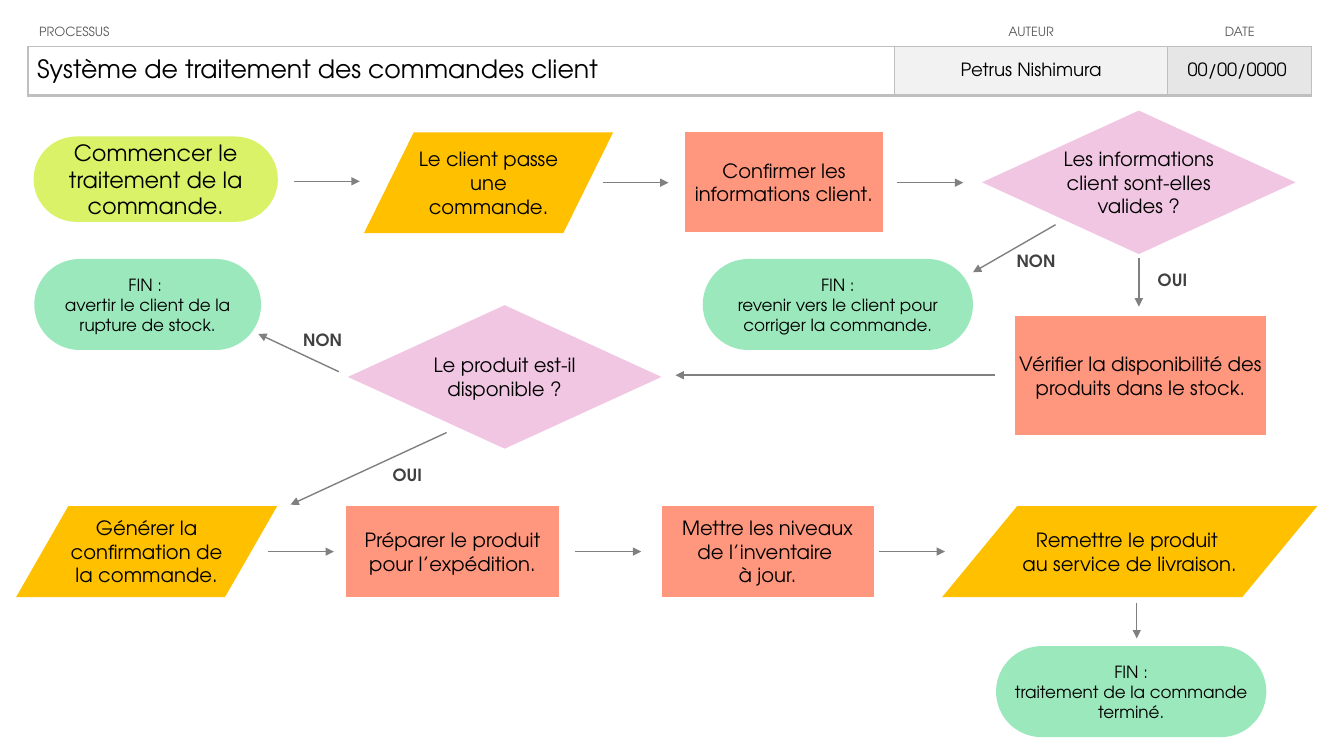
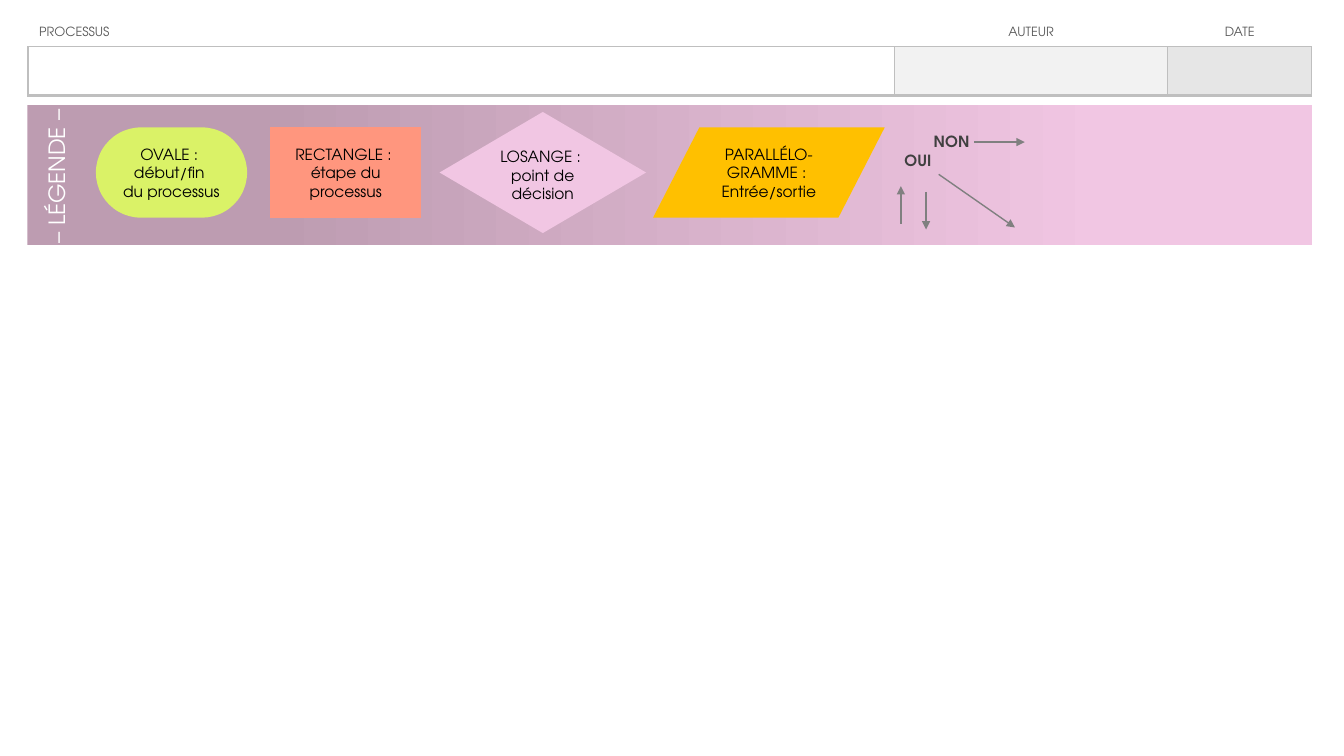
from dataclasses import dataclass

from lxml import etree
from pptx import Presentation
from pptx import util as u
from pptx.dml.color import RGBColor
from pptx.enum import shapes, text
from pptx.oxml.ns import qn

FONT = "TeX Gyre Adventor"
BLACK, WHITE, DARK = "000000", "FFFFFF", "404040"
GREY, RULE, LABEL = "808080", "BFBFBF", "595959"
PINK, MAUVE = "F1C6E3", "BD9CB1"
MID, LEFT = text.PP_ALIGN.CENTER, text.PP_ALIGN.LEFT


@dataclass(frozen=True)
class Kind:
    form: shapes.MSO_SHAPE
    fill: str
    size: float
    pad: float = 0


@dataclass(frozen=True)
class Node:
    kind: Kind
    x: float
    y: float
    w: float
    h: float
    words: tuple[str, ...]
    size: float = 0
    low: bool = False


@dataclass(frozen=True)
class Tag:
    x: float
    y: float
    w: float
    h: float
    word: str
    size: float = 12
    color: str = DARK
    bold: bool = True
    turn: bool = False


@dataclass(frozen=True)
class Arrow:
    x1: float
    y1: float
    x2: float
    y2: float


@dataclass(frozen=True)
class Column:
    label: str
    width: float
    fill: str
    size: float
    align: text.PP_ALIGN
    pads: tuple[float, float]  # label row, value row


FORM = shapes.MSO_SHAPE
START = Kind(FORM.ROUNDED_RECTANGLE, "DAF267", 16, 1.5)
END = Kind(FORM.ROUNDED_RECTANGLE, "9CE8BD", 12, 1.5)
STEP = Kind(FORM.FLOWCHART_PROCESS, "FF967E", 14, 1.5)
DATA = Kind(FORM.FLOWCHART_DATA, "FFC000", 14)
TEST = Kind(FORM.FLOWCHART_DECISION, PINK, 14)

# Header shared by both slides
COLUMNS = (
    Column("PROCESSUS", 619, WHITE, 18, LEFT, (8, 6.5)),
    Column("AUTEUR", 195, "F2F2F2", 13, MID, (0.5, 0.5)),
    Column("DATE", 103, "E6E6E6", 13, MID, (0.5, 0.5)),
)
ROWS = (20, 35)

# Flow slide
VALUES = ("Système de traitement des commandes client",
          "Petrus Nishimura", "00/00/0000 ")
TOP, LOW, HIGH = 130.5, 394, 65  # row axes, common height
LAST = LOW - HIGH / 2
STEPS = (
    Node(START, 24, 97.5, 174.5, 61, ("Commencer le traitement de la commande.",)),
    Node(DATA, 260, 94.5, 178, 72, ("Le client passe une commande.",)),
    Node(STEP, 489, 94, 142, 72, ("Confirmer les informations client.",)),
    Node(TEST, 701.5, 79, 224, 102.5,
         ("Les informations client sont-elles valides ?",)),
    Node(END, 24.5, 185, 162, HIGH,
         ("FIN : ", "avertir le client de la rupture de stock.")),
    Node(END, 502, 185, 193, HIGH,
         ("FIN :", "revenir vers le client pour corriger la commande.")),
    Node(TEST, 248.5, 218, 224, 102.5, ("Le produit est-il disponible ?",)),
    Node(STEP, 725, 225.5, 179.5, 85.5,
         ("Vérifier la disponibilité des produits dans le stock.",)),
    Node(DATA, 11.5, LAST, 186.5, HIGH,
         ("Générer la confirmation de la commande.",)),
    Node(STEP, 247.5, LAST, 151.5, HIGH,
         ("Préparer le produit pour l’expédition.",)),
    Node(STEP, 472.5, LAST, 151.5, HIGH,
         ("Mettre les niveaux\nde l’inventaire ", "à jour.")),
    Node(DATA, 673, LAST, 268, HIGH,
         ("Remettre le produit ", "au service de livraison.")),
    Node(END, 711.5, 461.5, 193, HIGH,
         ("FIN :", "traitement de la commande terminé.")),
)
REACH = 47
PATHS = (
    *(Arrow(x, y, x + REACH, y) for x, y in (
        (210, 129.5), (430.5, TOP), (641, TOP),
        (191.5, LOW), (411, LOW), (628, LOW))),
    Arrow(813.5, 184.5, 813.5, 219),
    Arrow(754, 160.5, 695, 194.5),
    Arrow(710.5, 268, 482.5, 268),
    Arrow(242, 265.5, 184.5, 238.5),
    Arrow(319, 309, 207.5, 360.5),
    Arrow(812, 431, 812, 456),
)
TAGS = (
    Tag(710.5, 170.5, 59, 31, "NON"),
    Tag(817, 184.5, 41, 31, "OUI"),
    Tag(201, 227.5, 59, 31, "NON"),
    Tag(270.5, 324, 41, 31, "OUI"),
)

# Legend slide
KEYS = (
    Node(START, 68.5, 91, 108, 64.5,
         ("OVALE : ", "début/fin ", "du processus"), 11),
    Node(STEP, 193, 91, 108, 64.5, ("RECTANGLE : ", "étape du\nprocessus"), 11),
    Node(TEST, 314, 80, 147.5, 86.5,
         ("LOSANGE : ", "point de décision"), 11, True),
    Node(DATA, 466.5, 91, 165.5, 64.5,
         ("PARALLÉLO-GRAMME : ", "Entrée/sortie"), 11),
)
KEY_PATHS = (
    Arrow(670.5, 124.5, 725, 162.5),
    Arrow(696, 101.5, 732, 101.5),
    Arrow(643.5, 160, 643.5, 133),
    Arrow(661.5, 137, 661.5, 164),
)
KEY_TAGS = (
    Tag(633.5, 98, 44.5, 32.5, "OUI", 11),
    Tag(657.5, 85, 44.5, 32.5, "NON", 11),
    Tag(22.5, 68.5, 36, 115, "– LÉGENDE –", 16, WHITE, False, True),
)


def tint(target, color: str) -> None:
    """Colour a font, or fill a shape, cell or line."""
    if hasattr(target, "solid"):
        target.solid()
        target = target.fore_color
    else:
        target = target.color
    target.rgb = RGBColor.from_string(color)


def spot(*sizes: float) -> list[u.Pt]:
    return [u.Pt(size) for size in sizes]


def write(frame, words: tuple[str, ...], size: float, color: str = BLACK,
          align: text.PP_ALIGN = MID, bold: bool = False) -> None:
    for i, line in enumerate(words):
        para = frame.paragraphs[0] if i == 0 else frame.add_paragraph()
        para.alignment = align
        for j, part in enumerate(line.split("\n")):
            if j:
                para.add_line_break()
            run = para.add_run()
            run.text = part
            run.font.name, run.font.size = FONT, u.Pt(size)
            run.font.bold = bold
            tint(run.font, color)


def inset(frame, pad: float) -> None:
    frame.word_wrap = True
    frame.vertical_anchor = text.MSO_ANCHOR.MIDDLE
    frame.margin_left = frame.margin_right = u.Pt(pad)
    frame.margin_top = frame.margin_bottom = u.Pt(pad)


def edge(cell, side: str, width: float) -> None:
    """Rule one side of a cell; zero width leaves it open."""
    props = cell._tc.get_or_add_tcPr()
    line = etree.SubElement(props, qn(f"a:ln{side}"), w=str(int(u.Pt(width))))
    if width:
        fill = etree.SubElement(line, qn("a:solidFill"))
        etree.SubElement(fill, qn("a:srgbClr"), val=RULE)
    else:
        etree.SubElement(line, qn("a:noFill"))


def draw_head(slide, values: tuple[str, ...] = ("", "", "")) -> None:
    total = sum(col.width for col in COLUMNS)
    table = slide.shapes.add_table(
        2, len(COLUMNS), *spot(20, 13.5, total, sum(ROWS))).table
    table.first_row = table.horz_banding = False
    for row, height in zip(table.rows, ROWS):
        row.height = u.Pt(height)
    for c, (col, value) in enumerate(zip(COLUMNS, values)):
        table.columns[c].width = u.Pt(col.width)
        looks = ((col.label, 9, LABEL, (0, 0, 0, 1)),
                 (value, col.size, BLACK, (1, 1, 1, 2.25)))
        for r, (word, size, color, rules) in enumerate(looks):
            cell = table.cell(r, c)
            cell.vertical_anchor = text.MSO_ANCHOR.MIDDLE
            cell.margin_left = u.Pt(col.pads[r])
            cell.margin_right = cell.margin_top = u.Pt(0.5)
            cell.margin_bottom = 0
            for side, width in zip("LRTB", rules):
                edge(cell, side, width)
            if r:
                tint(cell.fill, col.fill)
            else:
                cell.fill.background()
            if word:
                write(cell.text_frame, (word,), size, color, col.align)


def draw_node(slide, node: Node) -> None:
    kind = node.kind
    shape = slide.shapes.add_shape(
        kind.form, *spot(node.x, node.y, node.w, node.h))
    shape.shadow.inherit = False
    tint(shape.fill, kind.fill)
    shape.line.fill.background()
    if kind.form == FORM.ROUNDED_RECTANGLE:
        shape.adjustments[0] = 0.5
    inset(shape.text_frame, kind.pad)
    if node.low:
        shape.text_frame.vertical_anchor = text.MSO_ANCHOR.BOTTOM
    write(shape.text_frame, node.words, node.size or kind.size)


def draw_tag(slide, tag: Tag) -> None:
    box = slide.shapes.add_textbox(*spot(tag.x, tag.y, tag.w, tag.h))
    inset(box.text_frame, 1.5)
    if tag.turn:
        box.element.txBody.bodyPr.set("vert", "vert270")
    write(box.text_frame, (tag.word,), tag.size, tag.color, bold=tag.bold)


def draw_arrow(slide, arrow: Arrow) -> None:
    link = slide.shapes.add_connector(
        shapes.MSO_CONNECTOR.STRAIGHT,
        *spot(arrow.x1, arrow.y1, arrow.x2, arrow.y2))
    link.line.width = u.Pt(1)
    tint(link.line.fill, GREY)
    props = link.element.spPr
    etree.SubElement(props.find(qn("a:ln")), qn("a:tailEnd"), type="triangle")
    etree.SubElement(props, qn("a:effectLst"))


def draw_band(slide) -> None:
    band = slide.shapes.add_shape(FORM.RECTANGLE, *spot(19.5, 75, 918, 100))
    band.shadow.inherit = False
    band.line.fill.background()
    band.fill.gradient()
    band.fill.gradient_angle = 0
    for stop, place, color in zip(
            band.fill.gradient_stops, (0.19, 0.84), (MAUVE, PINK)):
        stop.position = place
        stop.color.rgb = RGBColor.from_string(color)


def draw_flow(slide, nodes: tuple[Node, ...], arrows: tuple[Arrow, ...],
              tags: tuple[Tag, ...]) -> None:
    for node in nodes:
        draw_node(slide, node)
    for arrow in arrows:
        draw_arrow(slide, arrow)
    for tag in tags:
        draw_tag(slide, tag)


def main() -> None:
    deck = Presentation()
    deck.slide_width, deck.slide_height = spot(960, 540)
    blank = deck.slide_layouts[6]

    flow = deck.slides.add_slide(blank)
    draw_head(flow, VALUES)
    draw_flow(flow, STEPS, PATHS, TAGS)

    legend = deck.slides.add_slide(blank)
    draw_band(legend)
    draw_head(legend)
    draw_flow(legend, KEYS, KEY_PATHS, KEY_TAGS)

    deck.save("out.pptx")


if __name__ == "__main__":
    main()
